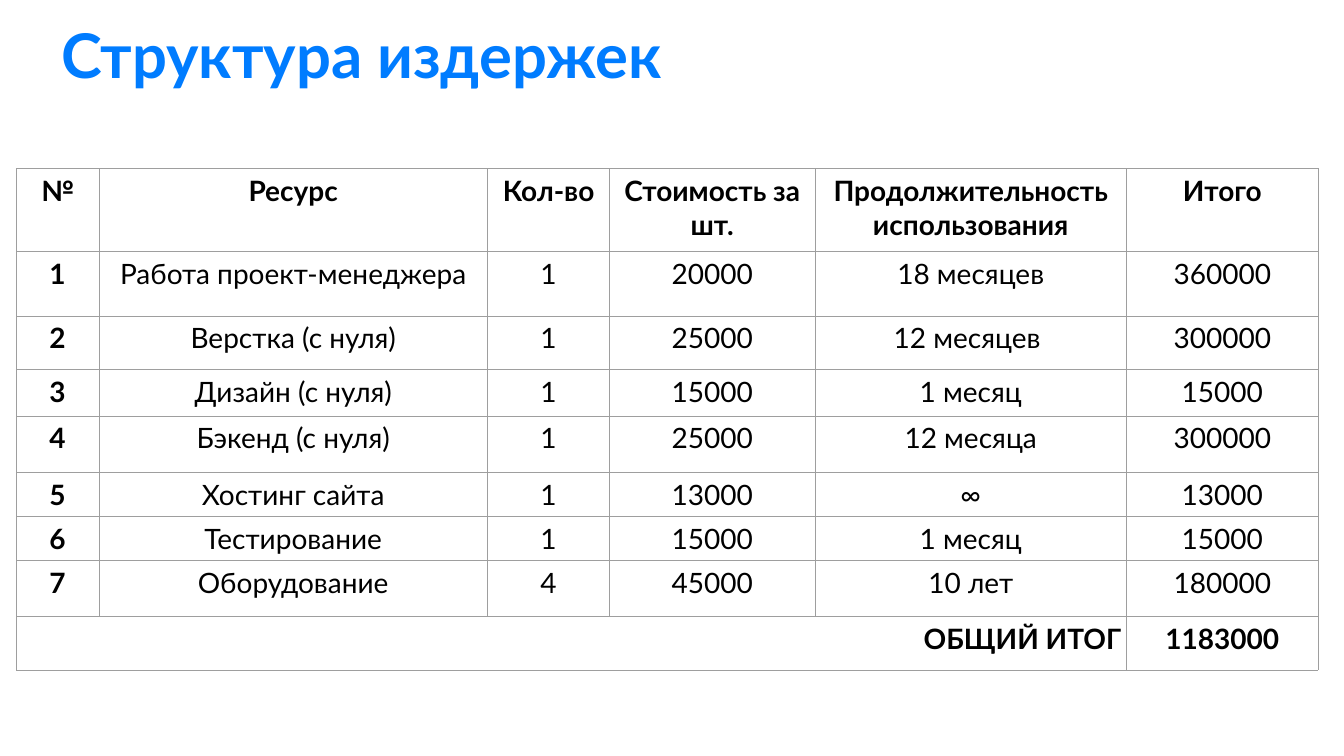
from lxml.etree import SubElement
from pptx import Presentation
from pptx.dml.color import RGBColor
from pptx.enum.text import PP_ALIGN
from pptx.oxml.ns import qn
from pptx.util import Cm, Pt

BLUE = RGBColor(0x00, 0x7C, 0xFF)
BLACK = RGBColor(0x00, 0x00, 0x00)
GRAY = RGBColor(0x9E, 0x9E, 0x9E)

COLUMN_WIDTHS = [2.08, 9.8, 3.07, 5.18, 7.85, 4.83]
ROW_HEIGHTS = [2.08, 1.63, 1.35, 1.17, 1.42, 1.1, 1.1, 1.42, 1.35]
COSTS = [
    ["№", "Ресурс", "Кол-во", "Стоимость за шт.", "Продолжительность использования", "Итого"],
    ["1", "Работа проект-менеджера", "1", "20000", "18 месяцев", "360000"],
    ["2", "Верстка (с нуля)", "1", "25000", "12 месяцев ", "300000"],
    ["3", "Дизайн (с нуля)", "1", "15000", "1 месяц", "15000"],
    ["4", "Бэкенд (с нуля)", "1", "25000", "12 месяца", "300000"],
    ["5", "Хостинг сайта", "1", "13000", "∞", "13000"],
    ["6", "Тестирование", "1", "15000", "1 месяц", "15000"],
    ["7", "Оборудование", "4", "45000", "10 лет", "180000"],
    ["ОБЩИЙ ИТОГ", "", "", "", "", "1183000"],
]


class SlideBuilder:
    """Holds the shared style and the slide being filled."""

    font_name = "Lato"
    cell_margin = Cm(0.13)
    border_width = Pt(0.38)

    def __init__(self, slide):
        self.slide = slide

    def style(self, p, size, color, bold, align):
        p.alignment = align
        p.font.name = self.font_name
        p.font.size = Pt(size)
        p.font.bold = bold
        p.font.color.rgb = color

    def title(self, text, left, top, width, height):
        tf = self.slide.shapes.add_textbox(Cm(left), Cm(top), Cm(width), Cm(height)).text_frame
        tf.word_wrap = True
        p = tf.paragraphs[0]
        p.text = text
        p.line_spacing = 0.9
        self.style(p, 44, BLUE, True, PP_ALIGN.LEFT)

    def borders(self, cell):
        tc_pr = cell._tc.get_or_add_tcPr()
        for side in ("lnL", "lnR", "lnT", "lnB"):
            line = SubElement(tc_pr, qn(f"a:{side}"), w=str(self.border_width))
            fill = SubElement(line, qn("a:solidFill"))
            SubElement(fill, qn("a:srgbClr"), val=str(GRAY))

    def cell(self, cell, text, bold, align):
        cell.margin_left = cell.margin_right = self.cell_margin
        cell.margin_top = cell.margin_bottom = self.cell_margin
        self.borders(cell)
        cell.fill.background()
        p = cell.text_frame.paragraphs[0]
        p.text = text
        self.style(p, 20, BLACK, bold, align)

    def cost_table(self, rows, left, top):
        """Add the table; the header, first column and total row are bold."""
        table = self.slide.shapes.add_table(
            len(rows), len(COLUMN_WIDTHS), Cm(left), Cm(top),
            Cm(sum(COLUMN_WIDTHS)), Cm(sum(ROW_HEIGHTS))).table
        table.first_row = table.horz_banding = False
        for column, width in zip(table.columns, COLUMN_WIDTHS):
            column.width = Cm(width)
        for row, height in zip(table.rows, ROW_HEIGHTS):
            row.height = Cm(height)

        total = len(rows) - 1
        for i, values in enumerate(rows):
            for j, text in enumerate(values):
                bold = i in (0, total) or j == 0
                align = PP_ALIGN.RIGHT if i == total and j == 0 else PP_ALIGN.CENTER
                self.cell(table.cell(i, j), text, bold, align)
        table.cell(total, 0).merge(table.cell(total, len(COLUMN_WIDTHS) - 2))


def main():
    prs = Presentation()
    prs.slide_width, prs.slide_height = Cm(33.87), Cm(19.05)
    s = SlideBuilder(prs.slides.add_slide(prs.slide_layouts[6]))
    s.title("Структура издержек", 1.3, 0.51, 31.6, 1.52)
    s.cost_table(COSTS, 0.41, 4.25)
    prs.save("out.pptx")


if __name__ == "__main__":
    main()
